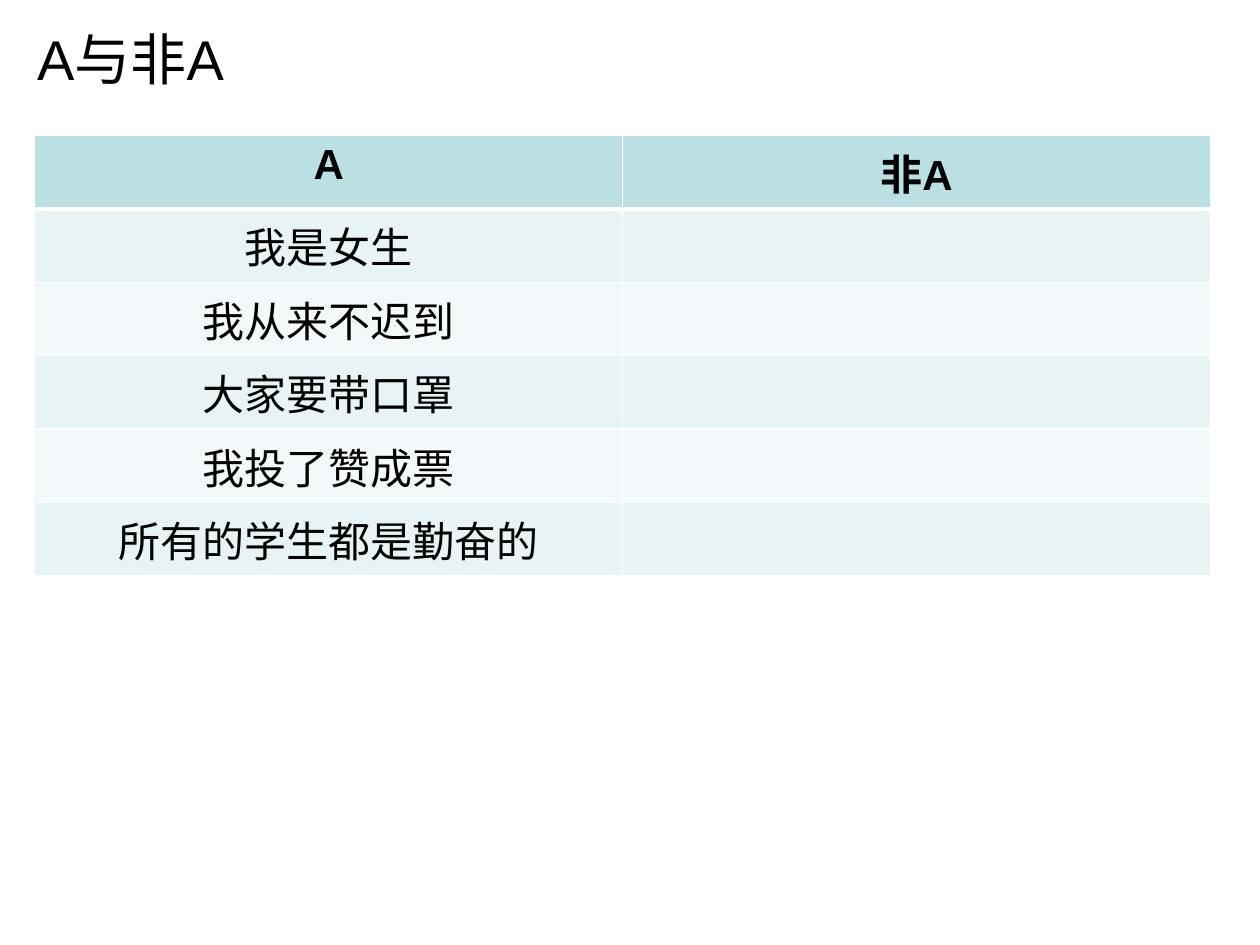
from dataclasses import dataclass

from lxml.etree import SubElement
from pptx import Presentation
from pptx.dml.color import RGBColor as Rgb
from pptx.enum.text import PP_ALIGN as Align
from pptx.oxml.ns import qn
from pptx.util import Cm, Pt


@dataclass(frozen=True)
class Theme:
    font: str = "Arial"
    ink: str = "000000"
    rule: str = "FFFFFF"
    header: str = "BBE0E3"
    bands: tuple = ("E7F3F4", "F3F9FA")
    title_size: int = 32
    cell_size: int = 24
    thin: int = 1
    thick: int = 3


THEME = Theme()
TITLE = "A与非A"
HEADINGS = ("A", "非A")
STATEMENTS = (
    "我是女生",
    "我从来不迟到",
    "大家要带口罩",
    "我投了赞成票",
    "所有的学生都是勤奋的",
)


def add_run(paragraph, words, size, bold=False):
    run = paragraph.add_run()
    run.text = words
    run.font.name = THEME.font
    run.font.size = Pt(size)
    run.font.bold = bold
    run.font.color.rgb = Rgb.from_string(THEME.ink)


def add_title(slide):
    frame = slide.shapes.add_textbox(Cm(0.5), Cm(0.36), Cm(24.54), Cm(18.42)).text_frame
    frame.word_wrap = True
    heading = frame.paragraphs[0]
    heading.space_before = Pt(THEME.title_size * 0.2)
    add_run(heading, TITLE, THEME.title_size)


def rule_cell(cell, top, bottom):
    properties = cell._tc.get_or_add_tcPr()
    widths = {"a:lnL": THEME.thin, "a:lnR": THEME.thin, "a:lnT": top, "a:lnB": bottom}
    for side, width in widths.items():
        line = SubElement(properties, qn(side), w=str(Pt(width)))
        SubElement(SubElement(line, qn("a:solidFill")), qn("a:srgbClr"), val=THEME.rule)


def fill_cell(cell, words, colour, top, bottom, bold):
    rule_cell(cell, top, bottom)
    cell.fill.solid()
    cell.fill.fore_color.rgb = Rgb.from_string(colour)
    if words:
        paragraph = cell.text_frame.paragraphs[0]
        paragraph.alignment = Align.CENTER
        add_run(paragraph, words, THEME.cell_size, bold)


def add_negation_table(slide):
    rows = [HEADINGS] + [(statement, "") for statement in STATEMENTS]
    row_height = Cm(1.48)
    table = slide.shapes.add_table(
        len(rows), len(HEADINGS), Cm(0.7), Cm(2.73), Cm(23.7), row_height * len(rows)
    ).table
    table.horz_banding = False
    for index, row in enumerate(rows):
        is_header = index == 0
        table.rows[index].height = row_height
        colour = THEME.header if is_header else THEME.bands[(index - 1) % 2]
        top = THEME.thick if index == 1 else THEME.thin
        bottom = THEME.thick if is_header else THEME.thin
        for column, words in enumerate(row):
            fill_cell(table.cell(index, column), words, colour, top, bottom, is_header)


def main():
    deck = Presentation()
    deck.slide_width, deck.slide_height = Cm(25.4), Cm(19.05)
    slide = deck.slides.add_slide(deck.slide_layouts[6])
    add_title(slide)
    add_negation_table(slide)
    deck.save("out.pptx")


if __name__ == "__main__":
    main()
